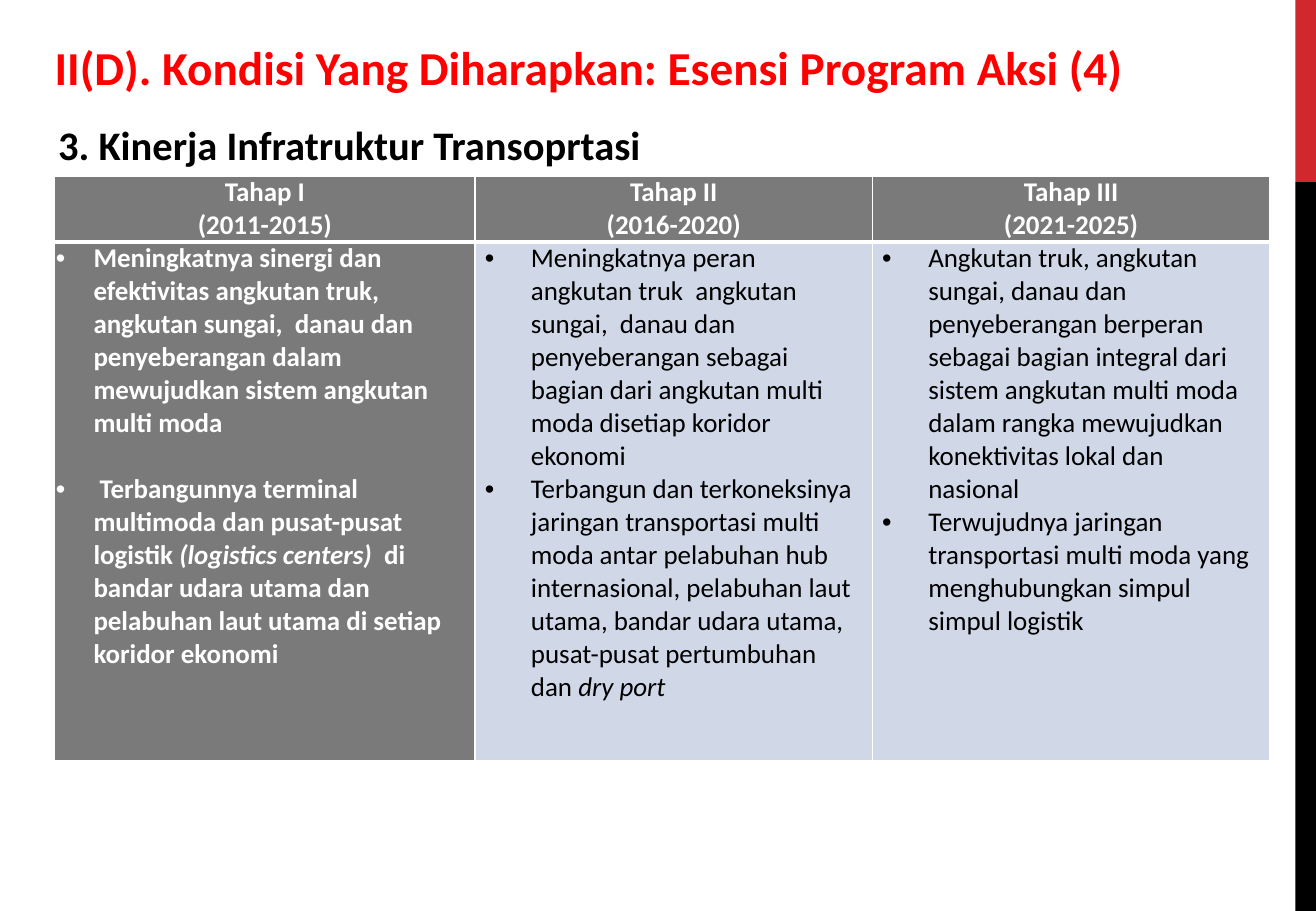
import pptx
import pptx.util
import pptx.dml.color
import pptx.enum.shapes
import pptx.enum.text
import pptx.oxml.ns
import lxml.etree

Inches = pptx.util.Inches
Pt = pptx.util.Pt
RGBColor = pptx.dml.color.RGBColor
ALIGN = pptx.enum.text.PP_ALIGN
ANCHOR = pptx.enum.text.MSO_ANCHOR
qn = pptx.oxml.ns.qn

RED = RGBColor(0xFF, 0x00, 0x00)
BAR_RED = RGBColor(0xD1, 0x28, 0x2E)
BLACK = RGBColor(0x00, 0x00, 0x00)
WHITE = RGBColor(0xFF, 0xFF, 0xFF)
GREY = RGBColor(0x7A, 0x7A, 0x7A)
PALE_BLUE = RGBColor(0xD0, 0xD8, 0xE8)

# Formats
TITLE_FONT = {"name": "Calibri", "size": Pt(28), "bold": True}
SUBTITLE_FONT = {"name": "Calibri", "size": Pt(24), "bold": True}
STRONG_FONT = {"name": "Calibri", "size": Pt(16), "bold": True}
PLAIN_FONT = {"name": "Calibri", "size": Pt(16), "bold": False}
NARROW_MARGINS = {"margin_left": Inches(0.01), "margin_right": Inches(0.01),
                  "margin_top": 0, "margin_bottom": 0}
WIDE_MARGINS = {"margin_left": Inches(0.08), "margin_right": Inches(0.08),
                "margin_top": 0, "margin_bottom": 0}

# Content: each list item is a sequence of (text, italic) pieces
COLUMN_WIDTHS = (3.46, 3.27, 3.27)
ROW_HEIGHTS = (0.53, 4.27)
STAGES = [
    {"heading": ("Tahap I", "(2011-2015)"),
     "font": STRONG_FONT, "color": WHITE, "fill": GREY,
     "margins": NARROW_MARGINS, "indent": 0.31, "gap": 19.5,
     "items": [
         [("Meningkatnya sinergi dan efektivitas angkutan truk, angkutan sungai,  "
           "danau dan penyeberangan dalam mewujudkan sistem angkutan multi moda", False)],
         [(" Terbangunnya terminal multimoda dan pusat-pusat logistik ", False),
          ("(logistics centers)", True),
          ("  di bandar udara utama dan pelabuhan laut utama di setiap "
           "koridor ekonomi", False)]]},
    {"heading": ("Tahap II", "(2016-2020)"),
     "font": PLAIN_FONT, "color": BLACK, "fill": PALE_BLUE,
     "margins": WIDE_MARGINS, "indent": 0.38, "gap": 0,
     "items": [
         [("Meningkatnya peran angkutan truk  angkutan sungai,  danau dan penyeberangan "
           "sebagai bagian dari angkutan multi moda disetiap koridor ekonomi", False)],
         [("Terbangun dan terkoneksinya jaringan transportasi multi moda antar pelabuhan "
           "hub internasional, pelabuhan laut utama, bandar udara utama, pusat-pusat "
           "pertumbuhan dan ", False),
          ("dry port", True)]]},
    {"heading": ("Tahap III", "(2021-2025)"),
     "font": PLAIN_FONT, "color": BLACK, "fill": PALE_BLUE,
     "margins": WIDE_MARGINS, "indent": 0.38, "gap": 0,
     "items": [
         [("Angkutan truk, angkutan sungai, danau dan penyeberangan berperan sebagai "
           "bagian integral dari sistem angkutan multi moda dalam rangka mewujudkan "
           "konektivitas lokal dan nasional", False)],
         [("Terwujudnya jaringan transportasi multi moda yang menghubungkan simpul "
           "simpul logistik", False)]]},
]


def apply_format(target, values):
    for attribute, value in values.items():
        setattr(target, attribute, value)


def add_run(paragraph, text, font, color, italic=False):
    run = paragraph.add_run()
    run.text = text
    apply_format(run.font, font)
    run.font.italic = italic
    run.font.color.rgb = color


def add_side_bar(slide, top, height, color):
    bar = slide.shapes.add_shape(pptx.enum.shapes.MSO_SHAPE.RECTANGLE,
                                 Inches(10.66), Inches(top), Inches(0.17), Inches(height))
    bar.shadow.inherit = False
    bar.fill.solid()
    bar.fill.fore_color.rgb = color
    bar.line.fill.background()


def write_heading(shape, box, text, font, color, anchor):
    apply_format(shape, dict(zip(("left", "top", "width", "height"), map(Inches, box))))
    frame = shape.text_frame
    apply_format(frame, {"word_wrap": True, "vertical_anchor": anchor,
                         "auto_size": pptx.enum.text.MSO_AUTO_SIZE.NONE})
    frame.paragraphs[0].alignment = ALIGN.LEFT
    add_run(frame.paragraphs[0], text, font, color)


def set_bullet(paragraph, indent):
    properties = paragraph._p.get_or_add_pPr()
    properties.set("marL", str(Inches(indent)))
    properties.set("indent", str(-Inches(indent)))
    lxml.etree.SubElement(properties, qn("a:buFont")).set("typeface", "Arial")
    lxml.etree.SubElement(properties, qn("a:buChar")).set("char", "•")


def set_borders(cell, widths):
    properties = cell._tc.get_or_add_tcPr()
    for position, (side, width) in enumerate(widths.items()):
        border = lxml.etree.Element(qn("a:" + side), w=str(Pt(width)))
        fill = lxml.etree.SubElement(border, qn("a:solidFill"))
        lxml.etree.SubElement(fill, qn("a:srgbClr")).set("val", str(WHITE))
        properties.insert(position, border)


def format_cell(cell, color, margins, top, bottom):
    apply_format(cell, margins)
    cell.vertical_anchor = ANCHOR.TOP
    cell.fill.solid()
    cell.fill.fore_color.rgb = color
    set_borders(cell, {"lnL": 1, "lnR": 1, "lnT": top, "lnB": bottom})


def next_paragraph(frame, index):
    return frame.add_paragraph() if index else frame.paragraphs[0]


def fill_heading_cell(cell, stage):
    format_cell(cell, GREY, NARROW_MARGINS, 1, 3)
    for index, line in enumerate(stage["heading"]):
        paragraph = next_paragraph(cell.text_frame, index)
        paragraph.alignment = ALIGN.CENTER
        add_run(paragraph, line, STRONG_FONT, WHITE)


def fill_list_cell(cell, stage):
    format_cell(cell, stage["fill"], stage["margins"], 3, 1)
    for index, pieces in enumerate(stage["items"]):
        paragraph = next_paragraph(cell.text_frame, index)
        paragraph.space_before = Pt(stage["gap"] if index else 0)
        set_bullet(paragraph, stage["indent"])
        for text, italic in pieces:
            add_run(paragraph, text, stage["font"], stage["color"], italic)


def add_stage_table(slide):
    table = slide.shapes.add_table(len(ROW_HEIGHTS), len(STAGES), Inches(0.45), Inches(1.45),
                                   Inches(sum(COLUMN_WIDTHS)), Inches(sum(ROW_HEIGHTS))).table
    table.horz_banding = False
    for row, height in zip(table.rows, ROW_HEIGHTS):
        row.height = Inches(height)
    for index, stage in enumerate(STAGES):
        table.columns[index].width = Inches(COLUMN_WIDTHS[index])
        fill_heading_cell(table.cell(0, index), stage)
        fill_list_cell(table.cell(1, index), stage)


def main():
    presentation = pptx.Presentation()
    presentation.slide_width = Inches(10.83)
    presentation.slide_height = Inches(7.5)
    slide = presentation.slides.add_slide(presentation.slide_layouts[5])

    # Side bars
    add_side_bar(slide, 0, 1.5, BAR_RED)
    add_side_bar(slide, 1.5, 6, BLACK)

    # Stages of the programme
    add_stage_table(slide)

    # Title and subtitle
    subtitle_box = (0.38, 0.96, 8.62, 0.46)
    subtitle = slide.shapes.add_textbox(*map(Inches, subtitle_box))
    write_heading(subtitle, subtitle_box, "3. Kinerja Infratruktur Transoprtasi",
                  SUBTITLE_FONT, BLACK, ANCHOR.MIDDLE)
    write_heading(slide.shapes.title, (0.35, 0.2, 9.96, 0.63),
                  "II(D). Kondisi Yang Diharapkan: Esensi Program Aksi (4)",
                  TITLE_FONT, RED, ANCHOR.BOTTOM)

    presentation.save("out.pptx")


if __name__ == "__main__":
    main()
